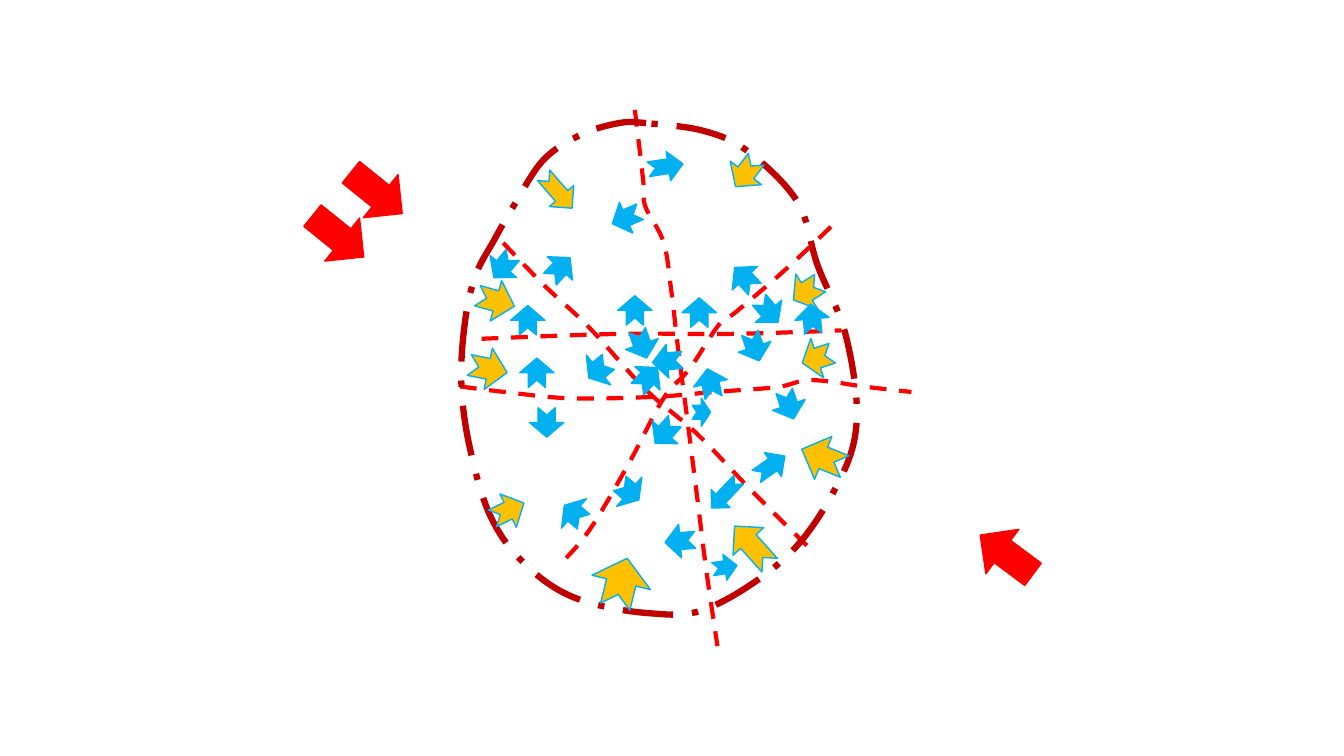
from lxml import etree
from pptx import Presentation, util as u
from pptx.dml.color import RGBColor
from pptx.enum import dml, shapes
from pptx.oxml.ns import qn

RED, DARK_RED, BLUE, GOLD = "FF0000", "C00000", "00B0F0", "FFC000"
NOTCHED = shapes.MSO_SHAPE.NOTCHED_RIGHT_ARROW
LEFT = shapes.MSO_SHAPE.LEFT_ARROW

# Knots (x, y) that each smooth line runs through
CRACKS = [
    [(344, 242), (443.5, 238.5), (522.5, 238.5), (601, 236)],
    [(593.5, 162), (560, 193.5), (525.5, 223), (513.5, 232), (492.5, 263.5),
     (474, 284.5), (449.5, 330.5), (422.5, 376.5), (402, 401)],
    [(359.5, 173.5), (389.5, 204.5), (421, 234), (461, 278), (497.5, 309.5),
     (535.5, 349), (567.5, 381), (581, 394)],
    [(453.5, 78.5), (459.5, 129.5), (461, 147.5), (474, 173), (479.5, 207.5),
     (484.5, 250), (490.5, 296), (498, 355), (504.5, 407), (512.5, 461.5)],
    [(328.5, 276), (360.5, 280), (407, 284.5), (466.5, 283.5), (510, 280),
     (555, 276.5), (579.5, 271.5), (620, 276.5), (651, 280)],
]
BOUNDARY = [
    (461.5, 88), (442, 88), (414.5, 96.5), (388, 114.5), (367, 147),
    (353, 171.5), (340, 196), (332.5, 227.5), (329.5, 271.5), (335, 317),
    (350, 368), (374.5, 402.5), (410.5, 427), (463, 438), (507, 434),
    (563, 396.5), (598.5, 345.5), (612, 300), (604, 239), (584, 189.5),
    (569.5, 144), (534, 108), (502.5, 93.5),
]

# Preset, fill, line, width, height, then (left, top, rotation) of each arrow
ARROWS = [
    (NOTCHED, GOLD, BLUE, 24.5, 28, [(520.5, 109.5, 126.8)]),
    (NOTCHED, GOLD, BLUE, 25, 26.5, [(350.5, 351.5, 333.9)]),
    (NOTCHED, GOLD, BLUE, 22.5, 29.5, [(565, 193.5, 147.9), (572.5, 241, 162)]),
    (NOTCHED, GOLD, BLUE, 33, 33, [(571.5, 310.5, 202)]),
    (NOTCHED, GOLD, BLUE, 35.5, 43, [(426, 394.5, 283.9)]),
    (NOTCHED, GOLD, BLUE, 37.5, 29.5, [(518.5, 375, 228.1)]),
    (NOTCHED, GOLD, BLUE, 27.5, 30, [(340.5, 200, 15.8), (335, 248.5, 11.2)]),
    (NOTCHED, GOLD, BLUE, 31, 23, [(383, 125.5, 49.2)]),
    (NOTCHED, BLUE, BLUE, 21, 24.5, [
        (380, 289.5, 90), (497, 261.5, 257.7), (373, 254, 270),
        (389.5, 179.5, 312.9), (553, 277, 71.6), (528.5, 235.5, 71.6),
        (521.5, 186.5, 227.1), (538.5, 210, 50), (569.5, 215.5, 265),
        (366.5, 216.5, 270), (349, 178, 129.5), (443, 209.5, 270),
        (489, 211, 270), (464.5, 296.5, 131.7), (452, 258, 312.9),
        (448, 233.5, 71.6)]),
    (NOTCHED, BLUE, BLUE, 21.5, 24, [
        (436.5, 143.5, 156.6), (475, 374.5, 175.2), (466, 246, 175.2)]),
    (NOTCHED, BLUE, BLUE, 25, 21, [(463, 108.5, 351.3), (538, 322.5, 324.5)]),
    (NOTCHED, BLUE, BLUE, 18, 27.5, [
        (440.5, 337.5, 40.6), (418.5, 250.5, 140.7), (401, 353, 220.1)]),
    (NOTCHED, BLUE, BLUE, 17.5, 18.5, [(509, 396, 351.3)]),
    (NOTCHED, BLUE, BLUE, 28, 18.5, [(504, 343.5, 133.6)]),
    (NOTCHED, BLUE, BLUE, 13, 20, [(494.5, 284.5, 0)]),
    (LEFT, RED, RED, 47, 39.5, [
        (245.5, 118, 218.9), (218, 149, 218.9), (695.5, 376.5, 36.6)]),
]


def rgb(color):
    return RGBColor.from_string(color)


def middle(a, b):
    return (a[0] + b[0]) / 2, (a[1] + b[1]) / 2


def smooth(knots, closed):
    """Return two control points and an end knot for each span of the curve."""
    count = len(knots)
    spans = count if closed else count - 1
    points = []
    for i in range(spans):
        before, start, end, after = (knots[(i + k) % count] for k in (-1, 0, 1, 2))
        first = tuple(s + (e - b) / 6 for b, s, e in zip(before, start, end))
        second = tuple(e - (a - s) / 6 for s, e, a in zip(start, end, after))
        if not closed and i == 0:
            first = middle(start, second)
        if not closed and i == spans - 1:
            second = middle(first, end)
        points += [first, second, end]
    return points


def add_curve(parent, knots, color, width, dash, closed=False):
    """Draw the control points as a freeform, then join every three as a Bézier."""
    start, *points = [(u.Pt(x), u.Pt(y))
                      for x, y in [knots[0]] + smooth(knots, closed)]
    builder = parent.build_freeform(*start)
    builder.add_line_segments(points, close=closed)
    curve = builder.convert_to_shape()
    outline = next(curve._element.iter(qn("a:path")))
    steps = outline.findall(qn("a:lnTo"))
    for trio in zip(steps[::3], steps[1::3], steps[2::3]):
        bezier = etree.Element(qn("a:cubicBezTo"))
        trio[0].addprevious(bezier)
        for step in trio:
            bezier.append(step[0])
            outline.remove(step)
    curve.fill.background()
    curve.shadow.inherit = False
    curve.line.color.rgb = rgb(color)
    for name, value in {"width": u.Pt(width), "dash_style": dash}.items():
        setattr(curve.line, name, value)


def add_arrow(parent, preset, fill, line, box, rotation):
    arrow = parent.add_shape(preset, *map(u.Pt, box))
    arrow.rotation = rotation
    arrow.shadow.inherit = False
    arrow.fill.solid()
    arrow.fill.fore_color.rgb = rgb(fill)
    arrow.line.color.rgb = rgb(line)
    arrow.line.width = u.Pt(1)


def main():
    deck = Presentation()
    deck.slide_width, deck.slide_height = u.Pt(960), u.Pt(540)
    page = deck.slides.add_slide(deck.slide_layouts[6])
    diagram = page.shapes.add_group_shape().shapes
    for knots in CRACKS:
        add_curve(diagram, knots, RED, 3, dml.MSO_LINE.DASH)
    add_curve(diagram, BOUNDARY, DARK_RED, 4.5, dml.MSO_LINE.LONG_DASH_DOT, closed=True)
    for preset, fill, line, width, height, places in ARROWS:
        for left, top, rotation in places:
            add_arrow(diagram, preset, fill, line, (left, top, width, height), rotation)
    deck.save("out.pptx")


if __name__ == "__main__":
    main()
